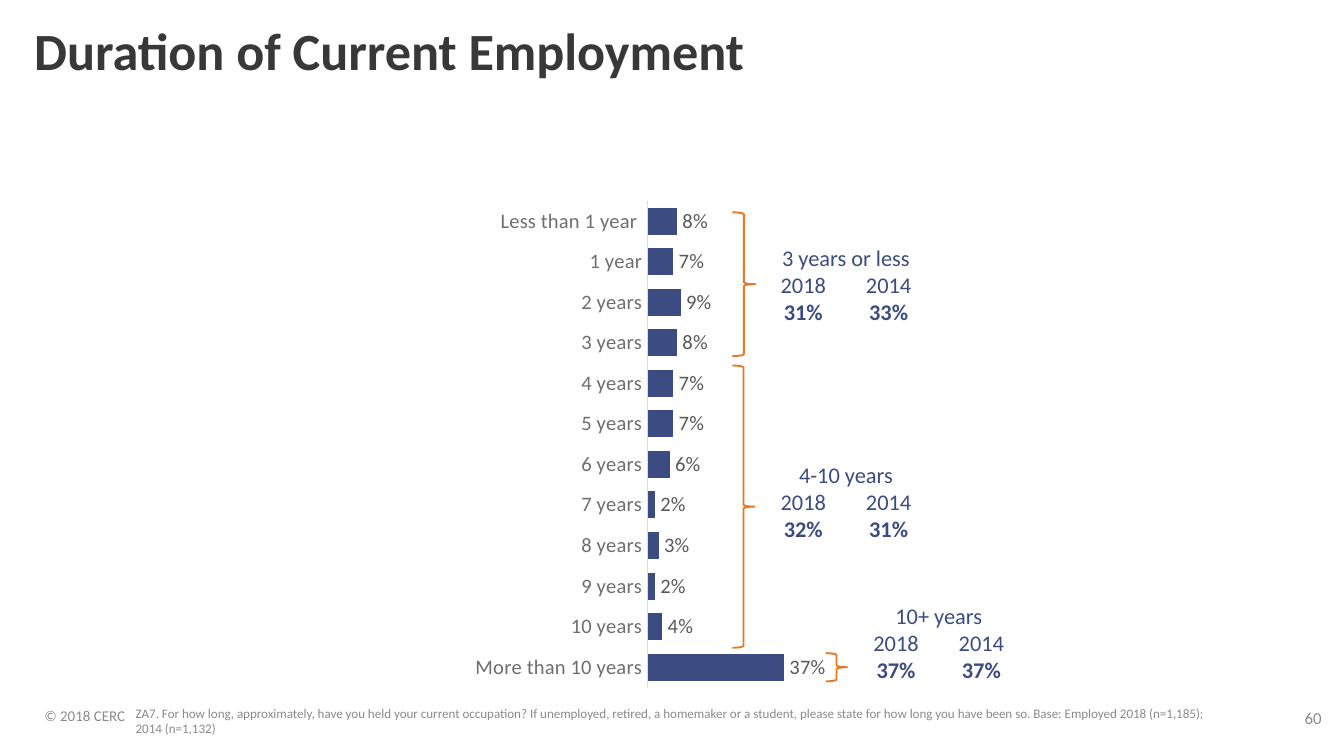
from lxml import etree
from pptx import Presentation
from pptx.chart.data import CategoryChartData
from pptx.dml.color import RGBColor
from pptx.enum.chart import XL_CHART_TYPE, XL_LABEL_POSITION, XL_TICK_MARK
from pptx.enum.shapes import MSO_SHAPE
from pptx.enum.text import MSO_ANCHOR, PP_ALIGN
from pptx.oxml.ns import qn
from pptx.util import Inches, Pt

BAR = XL_CHART_TYPE.BAR_CLUSTERED
OUTSIDE = XL_LABEL_POSITION.OUTSIDE_END
NO_TICK = XL_TICK_MARK.NONE
BRACE = MSO_SHAPE.RIGHT_BRACE
TOP, MIDDLE, BOTTOM = MSO_ANCHOR.TOP, MSO_ANCHOR.MIDDLE, MSO_ANCHOR.BOTTOM
LEFT, CENTER = PP_ALIGN.LEFT, PP_ALIGN.CENTER

FONT = "Calibri"
COLORS = {
    "title": "383839", "footer": "888B8D", "navy": "3C4B82",
    "brace": "E87722", "category": "6E6E71", "value": "58585B",
    "axis": "DDDDDE", "chart": "222223",
}
WIDTH = Inches(10)
HEIGHT = WIDTH * 9 // 16

DURATIONS = {
    "Less than 1 year ": 0.08, "1 year": 0.07, "2 years": 0.09,
    "3 years": 0.08, "4 years": 0.07, "5 years": 0.07, "6 years": 0.06,
    "7 years": 0.02, "8 years": 0.03, "9 years": 0.02, "10 years": 0.04,
    "More than 10 years": 0.37,
}
PLOT_AREA = {"x": 0.473, "y": 0.032, "w": 0.41, "h": 0.931}

# Heading, 2018 share, 2014 share, table corner, brace box
GROUPS = [
    ("3 years or less", "31%", "33%", (56.6, 32.4), (54.5, 28.09, 1.7, 19.02)),
    ("4-10 years", "32%", "31%", (56.6, 61.2), (54.5, 48.36, 1.65, 37.33)),
    ("10+ years", "37%", "37%", (63.5, 79.82), (61.45, 86.4, 1.6, 3.73)),
]
SUMMARY_SIZE = (12.7, 10.67)

QUESTION = (
    "ZA7. For how long, approximately, have you held your current occupation? "
    "If unemployed, retired, a homemaker or a student, please state for how "
    "long you have been so. Base: Employed 2018 (n=1,185); 2014 (n=1,132)"
)


def rgb(name):
    return RGBColor.from_string(COLORS[name])


def place(left, top, width, height):
    """Turn percentages of the slide's size into lengths."""
    return (int(WIDTH * left / 100), int(HEIGHT * top / 100),
            int(WIDTH * width / 100), int(HEIGHT * height / 100))


def style_font(font, size, color, bold=False):
    font.name = FONT
    font.size = Pt(size)
    font.bold = bold
    font.color.rgb = rgb(color)


def add_text(slide, text, box, size, color, anchor=BOTTOM, align=LEFT,
             spacing=1.0, bold=False):
    frame = slide.shapes.add_textbox(*place(*box)).text_frame
    frame.margin_left = frame.margin_right = 0
    frame.margin_top = frame.margin_bottom = 0
    frame.word_wrap = True
    frame.vertical_anchor = anchor
    frame.text = text
    paragraph = frame.paragraphs[0]
    paragraph.alignment = align
    paragraph.line_spacing = spacing
    style_font(paragraph.runs[0].font, size, color, bold)


def fix_plot_area(chart):
    """Pin the inner plot area to fixed shares of the chart."""
    plot_area = chart._chartSpace.chart.plotArea
    for old in plot_area.findall(qn("c:layout")):
        plot_area.remove(old)
    layout = etree.Element(qn("c:layout"))
    plot_area.insert(0, layout)
    manual = etree.SubElement(layout, qn("c:manualLayout"))
    settings = {"layoutTarget": "inner", "xMode": "edge", "yMode": "edge"}
    for tag, value in {**settings, **PLOT_AREA}.items():
        etree.SubElement(manual, qn(f"c:{tag}")).set("val", str(value))


def add_duration_chart(slide, box):
    data = CategoryChartData(number_format="0%")
    data.categories = list(DURATIONS)
    data.add_series("Series 1", list(DURATIONS.values()))
    chart = slide.shapes.add_chart(BAR, *place(*box), data).chart
    chart.has_legend = False
    chart.has_title = False
    style_font(chart.font, 10, "chart")
    fix_plot_area(chart)

    years = chart.category_axis
    years.reverse_order = True
    years.major_tick_mark = years.minor_tick_mark = NO_TICK
    years.format.line.color.rgb = rgb("axis")
    years.format.line.width = Pt(0.75)
    style_font(years.tick_labels.font, 11, "category")

    share = chart.value_axis
    share.minimum_scale, share.maximum_scale = 0, 1
    share.has_major_gridlines = False
    share.visible = False

    plot = chart.plots[0]
    plot.gap_width = 50
    plot.vary_by_categories = False
    bars = plot.series[0]
    bars.format.fill.solid()
    bars.format.fill.fore_color.rgb = rgb("navy")
    labels = bars.data_labels
    labels.show_value = True
    labels.number_format = "0%"
    labels.number_format_is_linked = False
    labels.position = OUTSIDE
    style_font(labels.font, 11, "value")


def add_brace(slide, box):
    brace = slide.shapes.add_shape(BRACE, *place(*box))
    brace.shadow.inherit = False
    brace.fill.background()
    brace.line.color.rgb = rgb("brace")
    brace.line.width = Pt(1)


def add_summary(slide, heading, share_2018, share_2014, corner):
    rows = [(heading, ""), ("2018", "2014"), (share_2018, share_2014)]
    table = slide.shapes.add_table(
        len(rows), 2, *place(*corner, *SUMMARY_SIZE)).table
    table.first_row = table.horz_banding = False
    table.cell(0, 0).merge(table.cell(0, 1))
    for row, texts in enumerate(rows):
        for column, text in enumerate(texts):
            cell = table.cell(row, column)
            cell.fill.background()
            cell.margin_left = cell.margin_right = 0
            cell.margin_top = cell.margin_bottom = 0
            cell.vertical_anchor = MIDDLE
            cell.text = text
            paragraph = cell.text_frame.paragraphs[0]
            paragraph.alignment = CENTER
            style_font(paragraph.font, 12, "navy")
            for run in paragraph.runs:
                style_font(run.font, 12, "navy", bold=row == 2)


def main():
    deck = Presentation()
    deck.slide_width, deck.slide_height = WIDTH, HEIGHT
    slide = deck.slides.add_slide(deck.slide_layouts[6])

    add_text(slide, "© 2018 CERC", (3.3, 92.62, 7.6, 3.2), 8, "footer",
             spacing=0.85)
    add_text(slide, "60", (96.3, 94.04, 2.8, 2.31), 9, "footer",
             align=CENTER, spacing=0.85)
    add_text(slide, QUESTION, (10.1, 93.16, 81.6, 4.27), 7, "footer")
    add_text(slide, "Duration of Current Employment", (2.55, 3.38, 87.6, 7.47),
             28, "title", anchor=TOP, spacing=0.9, bold=True)
    add_duration_chart(slide, (16.5, 24.36, 67, 69.16))
    for heading, share_2018, share_2014, corner, brace_box in GROUPS:
        add_brace(slide, brace_box)
        add_summary(slide, heading, share_2018, share_2014, corner)

    deck.save("out.pptx")


if __name__ == "__main__":
    main()
